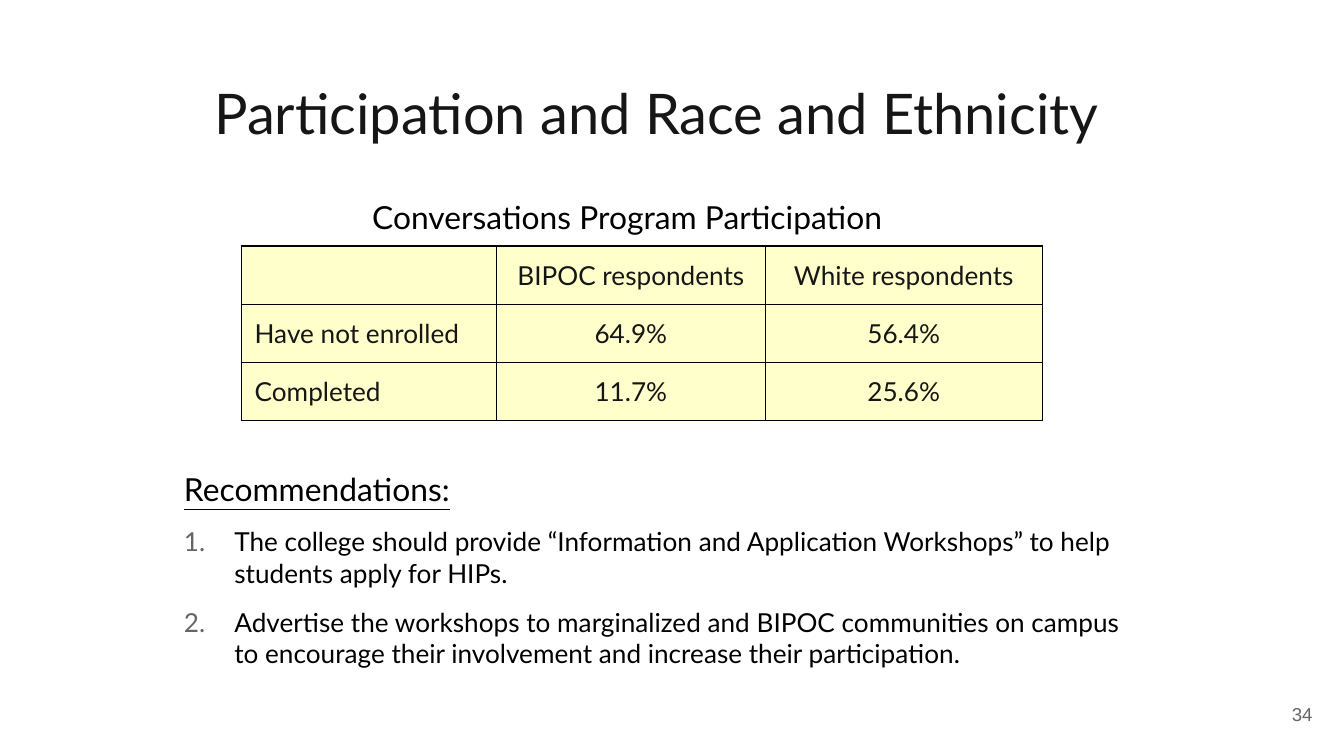
from lxml.etree import SubElement
from pptx import Presentation
from pptx.dml.color import RGBColor
from pptx.enum.text import MSO_ANCHOR, MSO_AUTO_SIZE, PP_ALIGN
from pptx.oxml.ns import qn
from pptx.util import Emu, Pt

PX = 4572
INSET = 20
COLORS = {
    "black": "000000",
    "ink": "161616",
    "gray": "666666",
    "cream": "FFFFCC",
}
PARTICIPATION = [
    ["", "BIPOC respondents", "White respondents"],
    ["Have not enrolled", "64.9%", "56.4%"],
    ["Completed", "11.7%", "25.6%"],
]
RECOMMENDATIONS = [
    "The college should provide “Information and Application Workshops” to help students apply for HIPs.",
    "Advertise the workshops to marginalized and BIPOC communities on campus "
    "to encourage their involvement and increase their participation.",
]


def px(length):
    return Emu(length * PX)


def write(paragraph, text, size=14, color="black", font="Lato",
          align=PP_ALIGN.LEFT, underline=None, before=0, spacing=None):
    paragraph.alignment = align
    paragraph.space_before = Pt(before)
    if spacing:
        paragraph.line_spacing = spacing
    run = paragraph.add_run()
    run.text = text
    run.font.name = font
    run.font.size = Pt(size)
    run.font.underline = underline
    run.font.bold = False
    run.font.color.rgb = RGBColor.from_string(COLORS[color])


def set_margins(holder):
    holder.margin_left = holder.margin_right = px(INSET)
    holder.margin_top = holder.margin_bottom = px(INSET)


def prepare_frame(shape, anchor=MSO_ANCHOR.TOP):
    frame = shape.text_frame
    frame.word_wrap = True
    frame.auto_size = MSO_AUTO_SIZE.NONE
    frame.vertical_anchor = anchor
    set_margins(frame)
    return frame


def add_box(slide, box, anchor=MSO_ANCHOR.TOP):
    return prepare_frame(slide.shapes.add_textbox(*map(px, box)), anchor)


def set_title(slide, text, box):
    title = slide.shapes.title
    title.left, title.top, title.width, title.height = map(px, box)
    write(prepare_frame(title).paragraphs[0], text, size=30, color="ink")


def add_fill(parent, color):
    fill = SubElement(parent, qn("a:solidFill"))
    SubElement(fill, qn("a:srgbClr"), val=COLORS[color])


def number_paragraph(paragraph, indent):
    properties = paragraph._p.get_or_add_pPr()
    properties.set("marL", str(px(indent)))
    properties.set("indent", str(-px(indent)))
    bullet_color = SubElement(properties, qn("a:buClr"))
    SubElement(bullet_color, qn("a:srgbClr"), val=COLORS["gray"])
    SubElement(properties, qn("a:buFont"), typeface="Lato")
    SubElement(properties, qn("a:buAutoNum"), type="arabicPeriod")


def style_cell(cell):
    properties = cell._tc.get_or_add_tcPr()
    for side in ("lnL", "lnR", "lnT", "lnB"):
        border = SubElement(properties, qn(f"a:{side}"), w=str(Pt(0.75)))
        add_fill(border, "black")
    cell.fill.solid()
    cell.fill.fore_color.rgb = RGBColor.from_string(COLORS["cream"])


def add_participation_table(slide, left, top, column_widths, row_height):
    rows = len(PARTICIPATION)
    table = slide.shapes.add_table(
        rows, len(column_widths), px(left), px(top),
        px(sum(column_widths)), px(rows * row_height)).table
    table.first_row = table.horz_banding = False
    for column, width in zip(table.columns, column_widths):
        column.width = px(width)
    for row, labels in enumerate(PARTICIPATION):
        table.rows[row].height = px(row_height)
        for column, label in enumerate(labels):
            cell = table.cell(row, column)
            style_cell(cell)
            if label:
                set_margins(cell)
                write(cell.text_frame.paragraphs[0], label, color="ink",
                      align=PP_ALIGN.CENTER if column else PP_ALIGN.LEFT)


def add_recommendations(slide, box):
    frame = add_box(slide, box)
    write(frame.paragraphs[0], "Recommendations:", size=17, underline=True)
    for recommendation in RECOMMENDATIONS:
        paragraph = frame.add_paragraph()
        write(paragraph, recommendation, before=9.6)
        number_paragraph(paragraph, 75)


def main():
    presentation = Presentation()
    presentation.slide_width = px(2000)
    presentation.slide_height = px(1125)
    slide = presentation.slides.add_slide(presentation.slide_layouts[5])

    set_title(slide, "Participation and Race and Ethnicity", (299, 97, 1632, 126))
    add_recommendations(slide, (254, 679, 1444, 362))
    page_number = add_box(slide, (1853, 1020, 120, 86), MSO_ANCHOR.MIDDLE)
    write(page_number.paragraphs[0], "34", size=10, color="gray",
          font="Arial", align=PP_ALIGN.RIGHT)
    add_participation_table(slide, 359, 366, [380, 400, 412], 84)
    caption = add_box(slide, (534, 266, 1164, 78))
    write(caption.paragraphs[0], "Conversations Program Participation",
          size=17, spacing=1.15)

    presentation.save("out.pptx")


if __name__ == "__main__":
    main()
